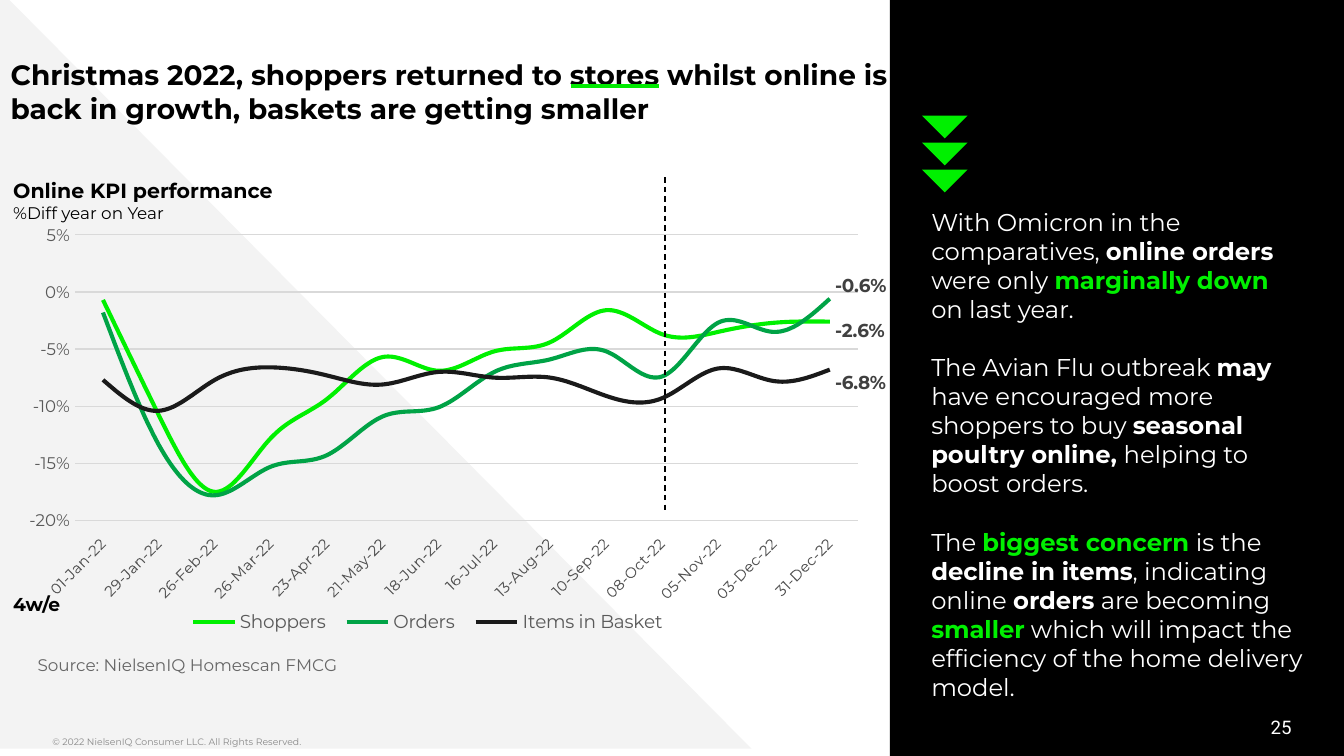
from lxml import etree
from pptx import Presentation
from pptx.chart.data import CategoryChartData
from pptx.dml.color import RGBColor
from pptx.enum.chart import XL_CHART_TYPE, XL_LABEL_POSITION, XL_LEGEND_POSITION
from pptx.enum.chart import XL_TICK_LABEL_POSITION, XL_TICK_MARK
from pptx.enum.dml import MSO_LINE
from pptx.enum.shapes import MSO_CONNECTOR, MSO_SHAPE
from pptx.enum.text import MSO_ANCHOR, MSO_AUTO_SIZE, PP_ALIGN
from pptx.oxml.ns import qn
from pptx.util import Cm, Pt

BLACK = RGBColor(0x00, 0x00, 0x00)
WHITE = RGBColor(0xFF, 0xFF, 0xFF)
PALE = RGBColor(0xF3, 0xF3, 0xF3)
GRID = RGBColor(0xD9, 0xD9, 0xD9)
FOOTER = RGBColor(0x88, 0x88, 0x88)
SOURCE = RGBColor(0x66, 0x66, 0x66)
AXIS = RGBColor(0x59, 0x59, 0x59)
LABEL = RGBColor(0x40, 0x40, 0x40)
LIME = RGBColor(0x00, 0xF0, 0x00)
UNDERLINE = RGBColor(0x00, 0xEB, 0x00)
GREEN = RGBColor(0x00, 0xA3, 0x46)
CHARCOAL = RGBColor(0x1A, 0x1A, 0x1A)

RECTANGLE, TRIANGLE = MSO_SHAPE.RECTANGLE, MSO_SHAPE.RIGHT_TRIANGLE
TOP, MIDDLE, BOTTOM = MSO_ANCHOR.TOP, MSO_ANCHOR.MIDDLE, MSO_ANCHOR.BOTTOM
LEFT, RIGHT = PP_ALIGN.LEFT, PP_ALIGN.RIGHT
NO_TICK = XL_TICK_MARK.NONE

DATES = ["01-Jan-22", "29-Jan-22", "26-Feb-22", "26-Mar-22", "23-Apr-22",
         "21-May-22", "18-Jun-22", "16-Jul-22", "13-Aug-22", "10-Sep-22",
         "08-Oct-22", "05-Nov-22", "03-Dec-22", "31-Dec-22"]
SERIES = [
    ("Shoppers", LIME, 0.02,
     [-0.007, -0.108, -0.175, -0.128, -0.094, -0.057, -0.069,
      -0.052, -0.044, -0.016, -0.037, -0.035, -0.027, -0.026]),
    ("Orders", GREEN, -0.03,
     [-0.018, -0.134, -0.178, -0.153, -0.143, -0.109, -0.101,
      -0.070, -0.059, -0.052, -0.074, -0.027, -0.035, -0.006]),
    ("Items in Basket", CHARCOAL, 0.03,
     [-0.077, -0.104, -0.077, -0.066, -0.073, -0.081, -0.070,
      -0.075, -0.075, -0.091, -0.093, -0.067, -0.078, -0.068]),
]

PLAIN, BOLD, ACCENT = (WHITE, False), (WHITE, True), (LIME, True)
COMMENTARY = [
    [("With Omicron in the comparatives, ", PLAIN), ("online orders ", BOLD),
     ("were only ", PLAIN), ("marginally down ", ACCENT),
     ("on last year.", PLAIN)],
    [("The Avian Flu outbreak ", PLAIN), ("may", BOLD),
     (" have encouraged more shoppers to buy ", PLAIN),
     ("seasonal poultry online, ", BOLD), ("helping to boost orders.", PLAIN)],
    [("The ", PLAIN), ("biggest concern ", ACCENT), ("is the ", PLAIN),
     ("decline in items", BOLD), (", indicating online ", PLAIN),
     ("orders", BOLD), (" are becoming ", PLAIN), ("smaller", ACCENT),
     (" which will impact the efficiency of the home delivery model.", PLAIN)],
]


class SlideBuilder:
    font = "Montserrat"

    def __init__(self, page):
        self.page = page

    def style(self, font, size, color, bold=False, name=None):
        font.name, font.size, font.bold = name or self.font, Pt(size), bold
        font.color.rgb = color

    def place(self, box, left, top, width, height):
        box.left, box.top = Cm(left), Cm(top)
        box.width, box.height = Cm(width), Cm(height)

    def frame(self, box, anchor=TOP, side=0, edge=0.13, wrap=True):
        frame = box.text_frame
        frame.auto_size = MSO_AUTO_SIZE.NONE
        frame.word_wrap, frame.vertical_anchor = wrap, anchor
        frame.margin_left = frame.margin_right = Cm(side)
        frame.margin_top = frame.margin_bottom = Cm(edge)
        return frame

    def title(self, area, text):
        box = self.page.shapes.title
        self.place(box, *area)
        para = self.frame(box, edge=0.25).paragraphs[0]
        para.alignment = LEFT
        span = para.add_run()
        span.text = text
        self.style(span.font, 15, BLACK, True)

    def body(self, area, paragraphs, size, pitch):
        box = self.page.placeholders[1]
        self.place(box, *area)
        frame = self.frame(box)
        for index, spans in enumerate(paragraphs):
            para = frame.add_paragraph() if index else frame.paragraphs[0]
            props = para._p.get_or_add_pPr()
            props.set("marL", "0")
            props.set("indent", "0")
            etree.SubElement(props, qn("a:buNone"))
            para.line_spacing = Pt(pitch)
            para.space_before = Pt(pitch if index else 0)
            for text, (color, bold) in spans:
                span = para.add_run()
                span.text = text
                self.style(span.font, size, color, bold)

    def text(self, area, lines, color, align=LEFT, name=None, **layout):
        box = self.page.shapes.add_textbox(*map(Cm, area))
        frame = self.frame(box, **layout)
        for index, (text, size, bold) in enumerate(lines):
            para = frame.add_paragraph() if index else frame.paragraphs[0]
            para.alignment = align
            span = para.add_run()
            span.text = text
            self.style(span.font, size, color, bold, name)

    def shape(self, kind, area, color, rotation=0, behind=False):
        shape = self.page.shapes.add_shape(kind, *map(Cm, area))
        shape.shadow.inherit = False
        shape.fill.solid()
        shape.fill.fore_color.rgb = color
        shape.line.fill.background()
        shape.rotation = rotation
        if behind:
            self.page.shapes._spTree.insert(2, shape._element)

    def line(self, ends, color, width, dash=None):
        line = self.page.shapes.add_connector(MSO_CONNECTOR.STRAIGHT, *map(Cm, ends))
        line.line.color.rgb, line.line.width = color, Pt(width)
        if dash:
            line.line.dash_style = dash
        etree.SubElement(line._element.spPr, qn("a:effectLst"))

    def chart_layout(self, parent, index, settings):
        for old in parent.findall(qn("c:layout")):
            parent.remove(old)
        layout = etree.Element(qn("c:layout"))
        manual = etree.SubElement(layout, qn("c:manualLayout"))
        for tag, value in settings.items():
            etree.SubElement(manual, qn("c:" + tag)).set("val", str(value))
        parent.insert(index, layout)

    def end_label(self, series, last, shift):
        series.data_labels.show_value = False
        label = series.points[last].data_label
        self.style(label.font, 10, LABEL, True)
        label.position = XL_LABEL_POSITION.RIGHT
        element = label._get_or_add_dLbl()
        self.chart_layout(element, 1, {"x": 0, "y": shift})
        number = etree.Element(qn("c:numFmt"), formatCode="0.0%", sourceLinked="0")
        element.insert(2, number)

    def line_chart(self, area, categories, rows):
        data = CategoryChartData(number_format="0.0%")
        data.categories = categories
        for name, _, _, values in rows:
            data.add_series(name, values)
        chart = self.page.shapes.add_chart(
            XL_CHART_TYPE.LINE, *map(Cm, area), data).chart
        chart.has_title = False
        self.style(chart.font, 10, BLACK)
        for series, (_, color, shift, values) in zip(chart.plots[0].series, rows):
            series.smooth = True
            series.format.line.color.rgb = color
            series.format.line.width = Pt(2.25)
            self.end_label(series, len(values) - 1, shift)
        self.axes(chart)
        chart.has_legend = True
        legend = chart.legend
        legend.position = XL_LEGEND_POSITION.BOTTOM
        legend.include_in_layout = False
        self.style(legend.font, 10, AXIS)
        self.chart_layout(legend._element, 1, {
            "xMode": "edge", "yMode": "edge",
            "x": 0.19, "y": 0.87, "w": 0.58, "h": 0.08})
        self.chart_layout(chart._chartSpace.chart.plotArea, 0, {
            "layoutTarget": "inner", "xMode": "edge", "yMode": "edge",
            "x": 0.07, "y": 0.03, "w": 0.91, "h": 0.65})

    def axes(self, chart):
        dates, values = chart.category_axis, chart.value_axis
        dates.tick_label_position = XL_TICK_LABEL_POSITION.LOW
        dates.major_tick_mark = dates.minor_tick_mark = NO_TICK
        self.style(dates.tick_labels.font, 8, AXIS)
        dates._element.find(qn("c:txPr")).find(qn("a:bodyPr")).set("rot", "-2700000")
        values.minimum_scale, values.maximum_scale = -0.2, 0.05
        values.major_unit = 0.05
        values.major_tick_mark = values.minor_tick_mark = NO_TICK
        values.tick_labels.number_format = "0%"
        values.tick_labels.number_format_is_linked = False
        self.style(values.tick_labels.font, 9, AXIS)
        values.format.line.fill.background()
        for line in (dates.format.line, values.major_gridlines.format.line):
            line.color.rgb, line.width = GRID, Pt(0.75)


def main():
    deck = Presentation()
    deck.slide_width, deck.slide_height = Cm(25.4), Cm(14.29)
    builder = SlideBuilder(deck.slides.add_slide(deck.slide_layouts[1]))
    builder.shape(TRIANGLE, (0, -0.18, 14.2, 14.33), PALE, behind=True)
    builder.shape(RECTANGLE, (16.82, 0, 8.58, 14.29), BLACK, behind=True)
    builder.title((0.2, 0.84, 16.89, 1.09),
                  "Christmas 2022, shoppers returned to stores whilst online is "
                  "back in growth, baskets are getting smaller")
    builder.body((17.6, 3.78, 7.09, 8.92), COMMENTARY, 13, 15.6)
    for step in range(3):
        builder.shape(TRIANGLE, (17.55, 1.88 + 0.51 * step, 0.61, 0.61), LIME, 315)
    builder.line_chart((0.28, 4.19, 16.48, 8.31), DATES, SERIES)
    builder.text((0, 3.23, 5.46, 1.12),
                 [("Online KPI performance", 11, True),
                  ("%Diff year on Year", 9, False)], BLACK, side=0.25, wrap=False)
    builder.text((0, 11.07, 1.45, 0.69), [("4w/e", 10, True)], BLACK,
                 side=0.25, wrap=False)
    builder.text((0.71, 12.5, 16, 0.51),
                 [("Source: NielsenIQ Homescan FMCG", 9, False)], SOURCE,
                 anchor=BOTTOM, edge=0.25)
    builder.text((0.99, 13.79, 14.07, 0.5),
                 [("© 2022 NielsenIQ Consumer LLC. All Rights Reserved.", 5, False)],
                 FOOTER)
    builder.text((18.69, 13.36, 5.72, 0.76), [("25", 10, False)], WHITE,
                 align=RIGHT, name="Roboto", anchor=MIDDLE)
    builder.line((12.57, 3.35, 12.57, 9.7), BLACK, 0.75, MSO_LINE.DASH)
    builder.line((10.8, 1.63, 12.45, 1.63), UNDERLINE, 2)
    deck.save("out.pptx")


if __name__ == "__main__":
    main()
